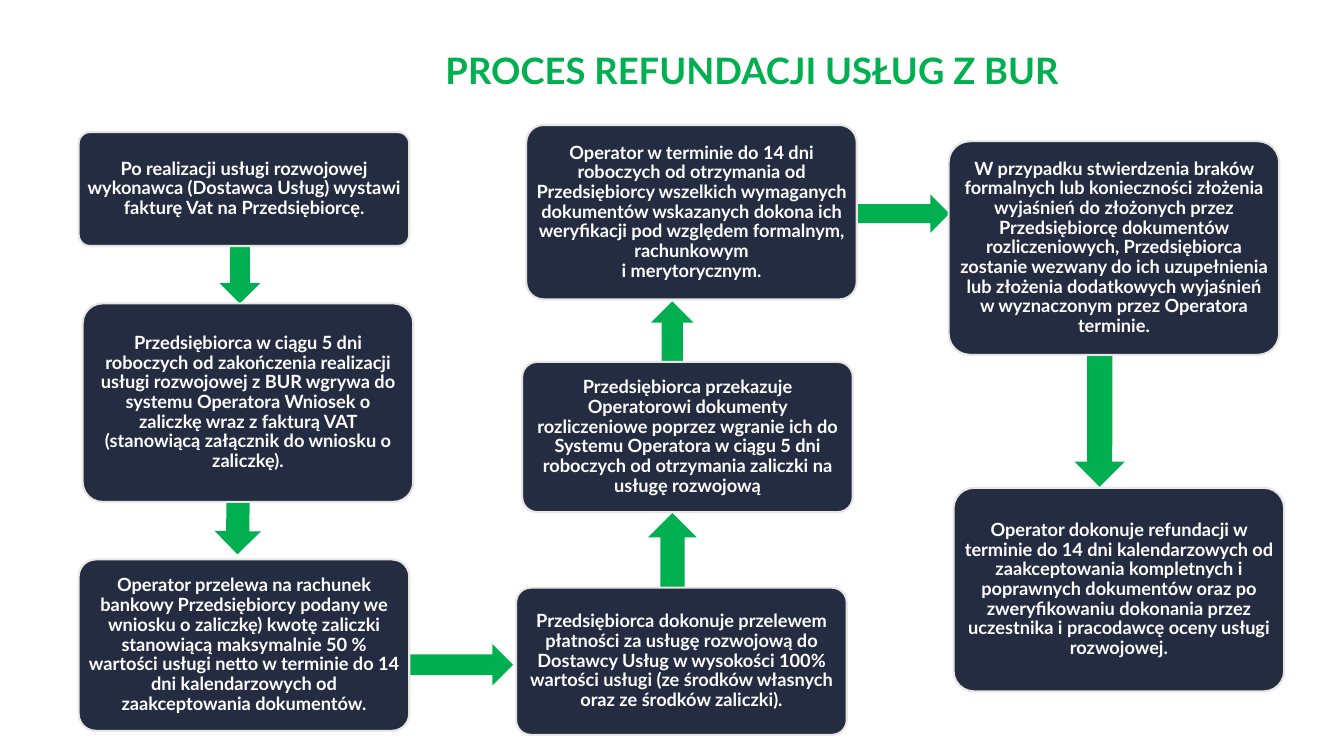
"""Build the slide with the refund process as eight boxes joined by arrows."""
from pptx import Presentation
from pptx.dml.color import RGBColor
from pptx.enum.shapes import MSO_SHAPE as Shape
from pptx.enum.text import MSO_ANCHOR as Anchor, PP_ALIGN as Align
from pptx.util import Inches, Pt

COLORS = {"green": "00B050", "navy": "242C41", "edge": "E8E6E2", "white": "FFFFFF"}
STEP_WIDTH = 24.6

deck = Presentation()
deck.slide_width, deck.slide_height = Inches(13.33), Inches(7.5)
slide = deck.slides.add_slide(deck.slide_layouts[6])


def place(left, top, width, height):
    """Turn percentages of the slide into lengths."""
    across, down = deck.slide_width / 100, deck.slide_height / 100
    return int(left * across), int(top * down), int(width * across), int(height * down)


def write(frame, text, size, color):
    """Write centred bold text, with a line break at each newline."""
    frame.word_wrap = True
    paragraph = frame.paragraphs[0]
    paragraph.alignment = Align.CENTER
    for index, line in enumerate(text.split("\n")):
        if index:
            paragraph.add_line_break()
        run = paragraph.add_run()
        run.text = line
        run.font.name, run.font.size, run.font.bold = "Lato", Pt(size), True
        run.font.color.rgb = RGBColor.from_string(COLORS[color])
    return paragraph


steps = [
    (5.85, 17.47, 15.07,
     "Po realizacji usługi rozwojowej wykonawca (Dostawca Usług) wystawi "
     "fakturę Vat na Przedsiębiorcę."),
    (6.15, 40.13, 26.27,
     "Przedsiębiorca w ciągu 5 dni roboczych od zakończenia realizacji usługi "
     "rozwojowej z BUR wgrywa do systemu Operatora Wniosek o zaliczkę wraz z "
     "fakturą VAT (stanowiącą załącznik do wniosku o zaliczkę)."),
    (5.85, 74, 22.67,
     "Operator przelewa na rachunek bankowy Przedsiębiorcy podany we wniosku o "
     "zaliczkę) kwotę zaliczki stanowiącą maksymalnie 50 % wartości usługi netto "
     "w terminie do 14 dni kalendarzowych od zaakceptowania dokumentów."),
    (38.4, 77.73, 19.47,
     "Przedsiębiorca dokonuje przelewem płatności za usługę rozwojową do "
     "Dostawcy Usług w wysokości 100% wartości usługi (ze środków własnych oraz "
     "ze środków zaliczki)."),
    (38.85, 47.87, 19.87,
     "Przedsiębiorca przekazuje Operatorowi dokumenty rozliczeniowe poprzez "
     "wgranie ich do Systemu Operatora w ciągu 5 dni roboczych od otrzymania "
     "zaliczki na usługę rozwojową"),
    (39.15, 16.53, 23.07,
     "Operator w terminie do 14 dni roboczych od otrzymania od Przedsiębiorcy "
     "wszelkich wymaganych dokumentów wskazanych dokona ich weryfikacji pod "
     "względem formalnym, rachunkowym\ni merytorycznym."),
    (70.58, 18.67, 28.27,
     "W przypadku stwierdzenia braków formalnych lub konieczności złożenia "
     "wyjaśnień do złożonych przez Przedsiębiorcę dokumentów rozliczeniowych, "
     "Przedsiębiorca zostanie wezwany do ich uzupełnienia lub złożenia "
     "dodatkowych wyjaśnień w wyznaczonym przez Operatora terminie."),
    (70.95, 64.53, 26.93,
     "Operator dokonuje refundacji w terminie do 14 dni kalendarzowych od "
     "zaakceptowania kompletnych i poprawnych dokumentów oraz po zweryfikowaniu "
     "dokonania przez uczestnika i pracodawcę oceny usługi rozwojowej."),
]
arrows = [
    (Shape.DOWN_ARROW, 16.35, 29.87, 3, 10.27, 0),
    (Shape.DOWN_ARROW, 15.98, 62, 3.45, 11.33, 0.7),
    (Shape.RIGHT_ARROW, 26.85, 85.2, 11.33, 5.47, 0),
    (Shape.UP_ARROW, 48.23, 67.87, 3.6, 15.73, 0),
    (Shape.UP_ARROW, 48.45, 39.87, 3.15, 12.13, 0),
    (Shape.RIGHT_ARROW, 62.7, 25.73, 7.95, 5.07, 0),
    (Shape.DOWN_ARROW, 79.95, 46.93, 3.75, 17.47, 0.1),
]

for number, (left, top, height, text) in enumerate(steps):
    for direction, *area, turn in arrows[number:number + 1]:
        arrow = slide.shapes.add_shape(direction, *place(*area))
        arrow.rotation = turn
        arrow.shadow.inherit = False
        arrow.fill.solid()
        arrow.fill.fore_color.rgb = RGBColor.from_string(COLORS["green"])
        arrow.line.fill.background()

    step = slide.shapes.add_shape(
        Shape.ROUNDED_RECTANGLE, *place(left, top, STEP_WIDTH, height))
    step.adjustments[0] = 0.1
    step.shadow.inherit = False
    step.fill.solid()
    step.fill.fore_color.rgb = RGBColor.from_string(COLORS["navy"])
    step.line.color.rgb = RGBColor.from_string(COLORS["edge"])
    step.line.width = Pt(1.5)
    frame = step.text_frame
    frame.vertical_anchor = Anchor.MIDDLE
    frame.margin_left = frame.margin_right = Inches(0.05)
    frame.margin_top = frame.margin_bottom = Inches(0.05)
    write(frame, text, 13, "white").line_spacing = 0.9

title = slide.shapes.add_textbox(*place(30.15, 5.73, 51.68, 7.2))
write(title.text_frame, "PROCES REFUNDACJI USŁUG Z BUR", 26, "green")

deck.save("out.pptx")
